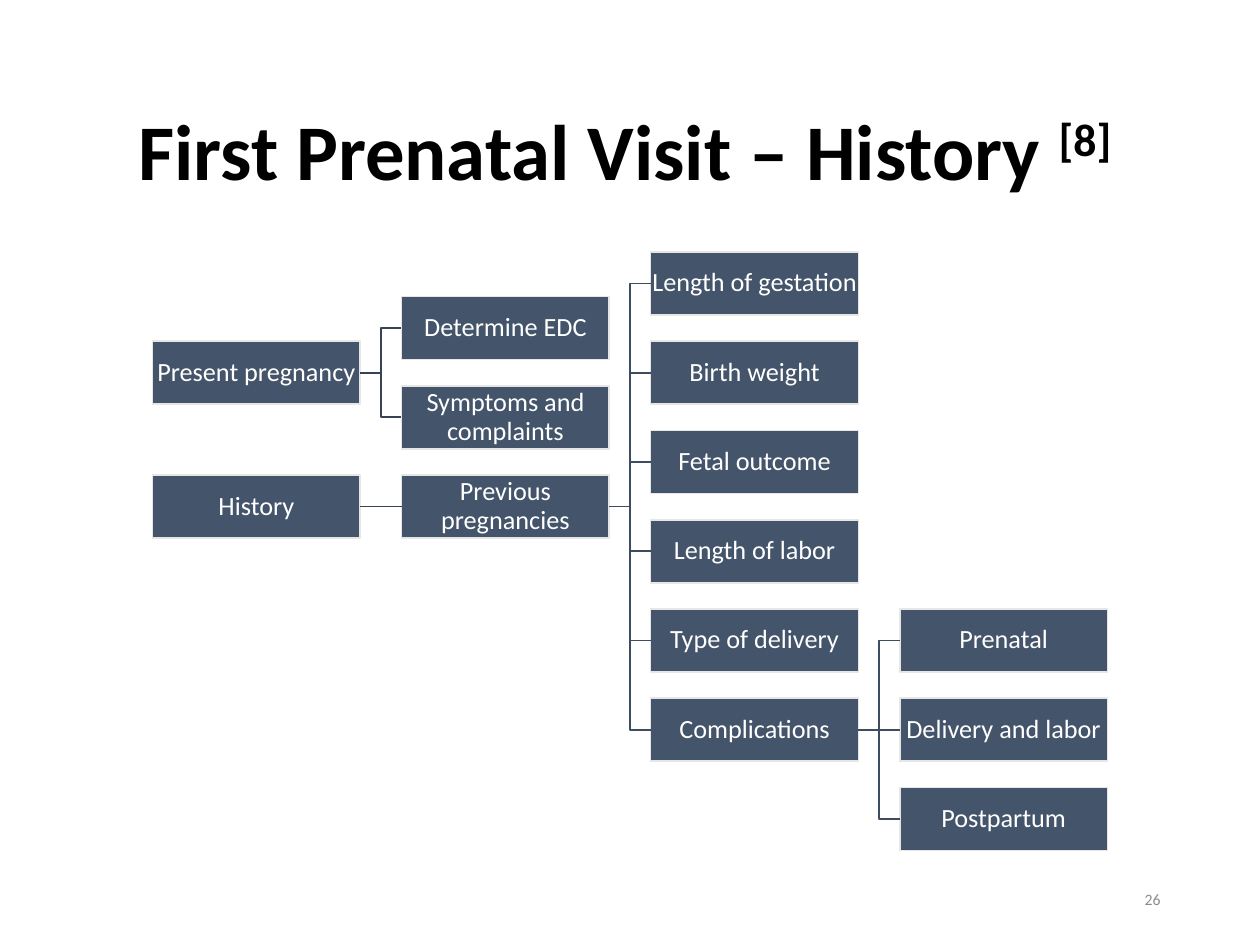
from dataclasses import dataclass

import pptx
import pptx.dml.color
import pptx.enum.shapes
import pptx.enum.text
import pptx.oxml.ns
import pptx.util
from lxml import etree

Inches = pptx.util.Inches
Pt = pptx.util.Pt
Align = pptx.enum.text.PP_ALIGN
Connector = pptx.enum.shapes.MSO_CONNECTOR
LEFT_SITE, RIGHT_SITE = 1, 3


@dataclass(frozen=True)
class Theme:
    font: str = "Calibri"
    title: str = "000000"
    number: str = "8C8C8C"
    node_text: str = "FFFFFF"
    node_fill: str = "44546A"
    node_line: str = "E7E6E6"
    first_branch: str = "364355"
    later_branch: str = "3E4C60"
    title_size: int = 45
    node_size: int = 15
    number_size: int = 9
    line_width: int = 1
    line_spacing: float = 0.9


THEME = Theme()

# Name: (column, row, parent)
HISTORY_TREE = {
    "Present pregnancy": (0, 1, None),
    "Determine EDC": (1, 0.5, "Present pregnancy"),
    "Symptoms and complaints": (1, 1.5, "Present pregnancy"),
    "History": (0, 2.5, None),
    "Previous pregnancies": (1, 2.5, "History"),
    "Length of gestation": (2, 0, "Previous pregnancies"),
    "Birth weight": (2, 1, "Previous pregnancies"),
    "Fetal outcome": (2, 2, "Previous pregnancies"),
    "Length of labor": (2, 3, "Previous pregnancies"),
    "Type of delivery": (2, 4, "Previous pregnancies"),
    "Complications": (2, 5, "Previous pregnancies"),
    "Prenatal": (3, 4, "Complications"),
    "Delivery and labor": (3, 5, "Complications"),
    "Postpartum": (3, 6, "Complications"),
}
LAST_COLUMN, LAST_ROW = 3, 6


def rgb(code):
    return pptx.dml.color.RGBColor.from_string(code)


def format_text(frame, size, color, align, bold=False):
    frame.word_wrap = True
    frame.auto_size = pptx.enum.text.MSO_AUTO_SIZE.NONE
    frame.vertical_anchor = pptx.enum.text.MSO_ANCHOR.MIDDLE
    paragraph = frame.paragraphs[0]
    paragraph.alignment = align
    paragraph.line_spacing = THEME.line_spacing
    for run in paragraph.runs:
        run.font.name = THEME.font
        run.font.size = Pt(size)
        run.font.bold = bold
        run.font.color.rgb = rgb(color)


def place_title(slide, left, top, width, height):
    title = slide.shapes.title
    title.left, title.top, title.width, title.height = left, top, width, height
    title.text_frame.text = "First Prenatal Visit – History "
    citation = title.text_frame.paragraphs[0].add_run()
    citation.text = "[8] "
    format_text(title.text_frame, THEME.title_size, THEME.title, Align.CENTER, bold=True)
    citation._r.get_or_add_rPr().set("baseline", "30000")


def place_page_number(slide, left, top, width, height):
    number = slide.shapes.add_textbox(left, top, width, height)
    number.text_frame.text = "26"
    format_text(number.text_frame, THEME.number_size, THEME.number, Align.RIGHT)


def add_node(slide, name, left, top, width, height):
    node = slide.shapes.add_shape(
        pptx.enum.shapes.MSO_SHAPE.RECTANGLE, left, top, width, height)
    node.shadow.inherit = False
    node.fill.solid()
    node.fill.fore_color.rgb = rgb(THEME.node_fill)
    node.line.color.rgb = rgb(THEME.node_line)
    node.line.width = Pt(THEME.line_width)
    frame = node.text_frame
    frame.text = name
    frame.margin_left = frame.margin_right = Inches(0.01)
    frame.margin_top = frame.margin_bottom = Inches(0.01)
    format_text(frame, THEME.node_size, THEME.node_text, Align.CENTER)
    return node


def add_branch(slide, parent, child, color):
    """Join the parent's right side to the child's left side."""
    kind = Connector.STRAIGHT if parent.top == child.top else Connector.ELBOW
    branch = slide.shapes.add_connector(
        kind,
        parent.left + parent.width, parent.top + parent.height // 2,
        child.left, child.top + child.height // 2)
    branch.begin_connect(parent, RIGHT_SITE)
    branch.end_connect(child, LEFT_SITE)
    branch.line.color.rgb = rgb(color)
    branch.line.width = Pt(THEME.line_width)
    etree.SubElement(branch._element.spPr, pptx.oxml.ns.qn("a:effectLst"))


def place_history_tree(slide, left, top, width, height):
    node_width, node_height = Inches(1.65), Inches(0.5)
    column_step = (width - node_width) / LAST_COLUMN
    row_step = (height - node_height) / LAST_ROW
    nodes = {}
    for name, (column, row, parent) in HISTORY_TREE.items():
        nodes[name] = add_node(
            slide, name,
            round(left + column * column_step), round(top + row * row_step),
            node_width, node_height)
        if parent:
            color = THEME.first_branch if column == 1 else THEME.later_branch
            add_branch(slide, nodes[parent], nodes[name], color)


def main():
    deck = pptx.Presentation()
    deck.slide_width, deck.slide_height = Inches(10), Inches(7.5)
    slide = deck.slides.add_slide(deck.slide_layouts.get_by_name("Title Only"))
    place_title(slide, Inches(0.69), Inches(0.61), Inches(8.62), Inches(1.24))
    place_history_tree(slide, Inches(1.21), Inches(2), Inches(7.58), Inches(4.75))
    place_page_number(slide, Inches(7.06), Inches(6.95), Inches(2.25), Inches(0.4))
    deck.save("out.pptx")


if __name__ == "__main__":
    main()
